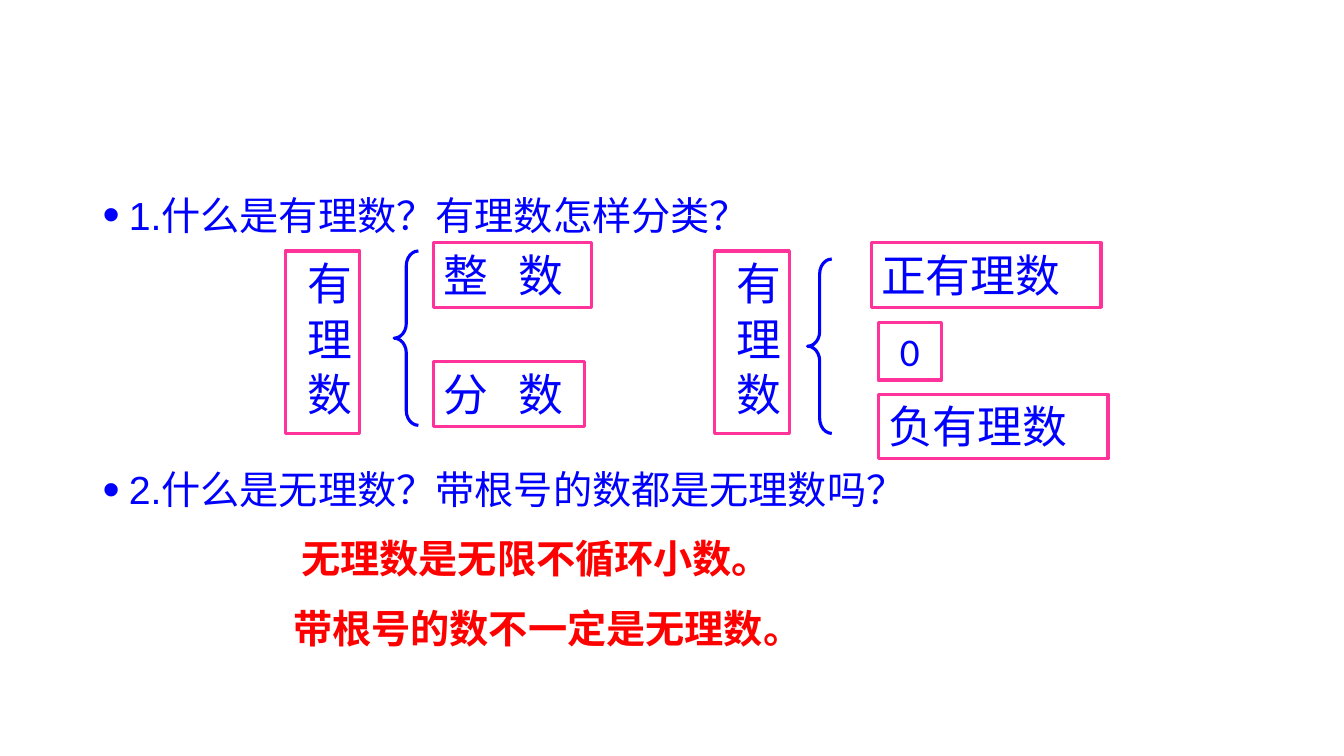
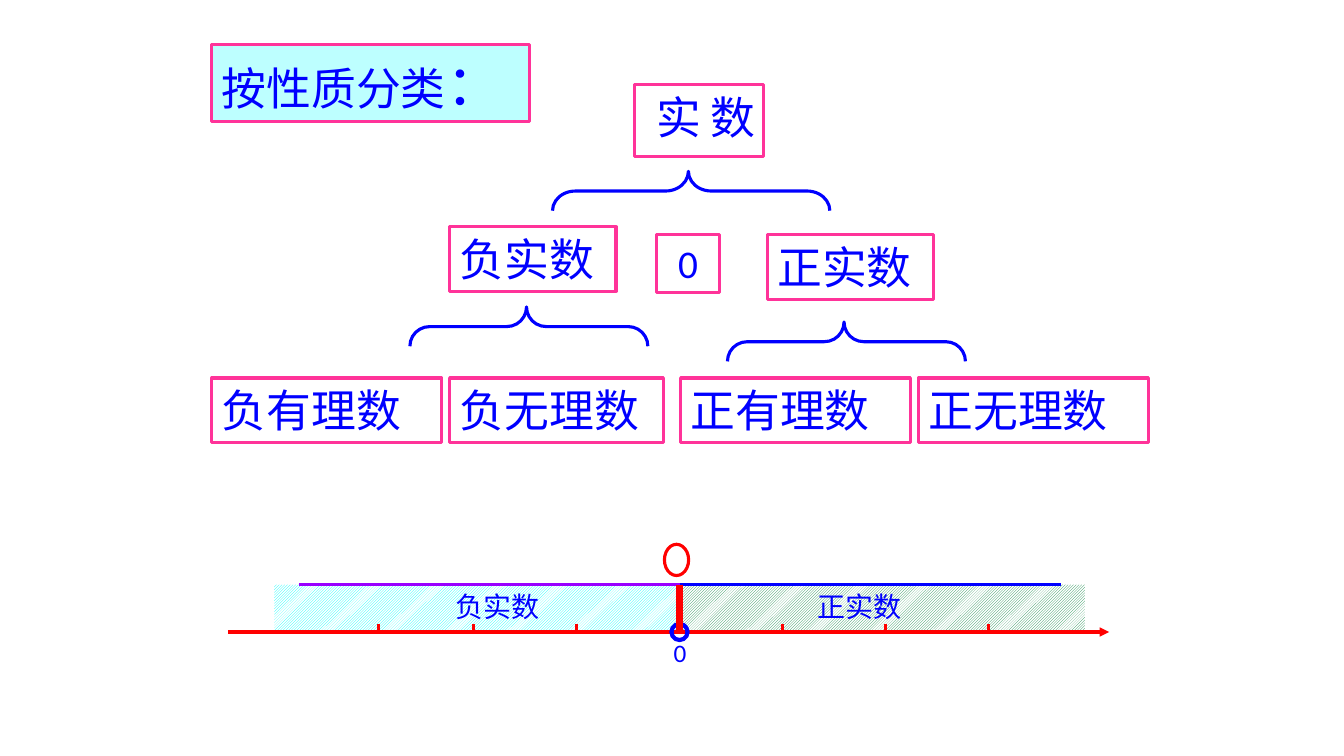
import pptx
import pptx.dml.color
import pptx.enum.dml
import pptx.enum.shapes
import pptx.enum.text
import pptx.oxml
import pptx.oxml.ns
import pptx.util
from dataclasses import dataclass

Inches = pptx.util.Inches
Pt = pptx.util.Pt
RGB = pptx.dml.color.RGBColor.from_string
qn = pptx.oxml.ns.qn
SHAPE = pptx.enum.shapes.MSO_SHAPE
ALIGN = pptx.enum.text.PP_ALIGN
ANCHOR = pptx.enum.text.MSO_ANCHOR


@dataclass(frozen=True)
class Theme:
    blue: str = "0000FF"
    pink: str = "FF3399"
    red: str = "FF0000"
    purple: str = "9900FF"
    cyan: str = "00FFFF"
    green: str = "158949"
    white: str = "FFFFFF"
    font: str = "Calibri"
    question_font: str = "Arial"
    colon: int = 40
    term: int = 32
    body: int = 28
    region: int = 20
    tick: int = 18
    outline: float = 2.25


theme = Theme()


def add_box(shapes, box, runs=(), kind=SHAPE.RECTANGLE, line=theme.pink, width=theme.outline,
            color=theme.blue, font=theme.font, bold=False, align=ALIGN.LEFT, vertical=False):
    """Add a preset shape, or a text box if kind is None; runs are (text, size) pairs."""
    frame = [Inches(value) for value in box]
    if kind is None:
        shape = shapes.add_textbox(*frame)
    else:
        shape = shapes.add_shape(kind, *frame)
        shape.shadow.inherit = False
        shape.fill.background()
        if line:
            shape.line.color.rgb = RGB(line)
            shape.line.width = Pt(width)
        else:
            shape.line.fill.background()
    text_frame = shape.text_frame
    text_frame.word_wrap = True
    text_frame.vertical_anchor = ANCHOR.TOP
    if vertical:
        text_frame._txBody.bodyPr.set("vert", "eaVert")
    paragraph = text_frame.paragraphs[0]
    paragraph.alignment = align
    for text, size in runs:
        run = paragraph.add_run()
        run.text = text
        run.font.size = Pt(size)
        run.font.name = font
        run.font.bold = bold
        run.font.color.rgb = RGB(color)
    return shape


def add_line(shapes, start, end, color, width=theme.outline, arrow=False):
    connector = shapes.add_connector(
        pptx.enum.shapes.MSO_CONNECTOR.STRAIGHT, *[Inches(value) for value in (*start, *end)])
    connector.line.color.rgb = RGB(color)
    connector.line.width = Pt(width)
    properties = connector.element.spPr
    if arrow:
        tail = pptx.oxml.ns.nsdecls("a")
        properties.find(qn("a:ln")).append(
            pptx.oxml.parse_xml(f'<a:tailEnd {tail} type="triangle"/>'))
    properties.append(properties.makeelement(qn("a:effectLst"), {}))


presentation = pptx.Presentation()
presentation.slide_width = Inches(13.33)
presentation.slide_height = Inches(7.5)
blank = presentation.slide_layouts[6]

# Review of rational and irrational numbers
slide = presentation.slides.add_slide(blank)
shapes = slide.shapes

for top, question in ((1.85, "1.什么是有理数？有理数怎样分类？"),
                      (4.57, "2.什么是无理数？带根号的数都是无理数吗？")):
    shape = add_box(shapes, (0.92, top, 11.5, 0.66), [(question, theme.body)],
                    kind=None, font=theme.question_font)
    properties = shape.text_frame.paragraphs[0]._p.get_or_add_pPr()
    properties.set("marL", str(Inches(0.26)))
    properties.set("indent", str(Inches(-0.26)))
    for tag, attributes in (("a:buSzPct", {"val": "125000"}),
                            ("a:buFont", {"typeface": theme.question_font}),
                            ("a:buChar", {"char": "•"})):
        properties.append(properties.makeelement(qn(tag), attributes))

for root_left, brace_left, brace_top in ((2.83, 3.91, 2.49), (7.09, 8.01, 2.57)):
    add_box(shapes, (root_left, 2.49, 0.74, 1.81), [("有 理 数", theme.term)], vertical=True)
    brace = add_box(shapes, (brace_left, brace_top, 0.24, 1.73), kind=SHAPE.LEFT_BRACE, line=theme.blue)
    brace.adjustments[0] = 0.61

for top, width, text in ((2.41, 1.57, "整\t数"), (3.59, 1.5, "分\t数")):
    shape = add_box(shapes, (4.3, top, width, 0.64), [(text, theme.term)])
    properties = shape.text_frame.paragraphs[0]._p.get_or_add_pPr()
    tabs = properties.makeelement(qn("a:tabLst"), {})
    tabs.append(tabs.makeelement(qn("a:tab"), {"pos": str(Inches(0.74)), "algn": "l"}))
    properties.append(tabs)

for left, top, text in ((8.64, 2.41, "正有理数"), (8.71, 3.91, "负有理数")):
    add_box(shapes, (left, top, 2.28, 0.64), [(text, theme.term)])
add_box(shapes, (8.71, 3.2, 0.63, 0.57), [("0", theme.body)], align=ALIGN.CENTER)

for left, top, answer in ((2.89, 5.25, "无理数是无限不循环小数。"),
                          (2.81, 5.95, "带根号的数不一定是无理数。")):
    add_box(shapes, (left, top, 7.17, 0.66), [(answer, theme.body)],
            kind=None, color=theme.red, bold=True)

# Real numbers classified by sign
slide = presentation.slides.add_slide(blank)
shapes = slide.shapes
origin, axis_top, band_top = 6.74, 6.27, 5.8
band_width = 4.02

for left, color in ((origin - band_width, theme.cyan), (origin, theme.green)):
    band = add_box(shapes, (left, band_top, band_width, axis_top - band_top), line=None)
    band.fill.patterned()
    band.fill.pattern = pptx.enum.dml.MSO_PATTERN.DARK_UPWARD_DIAGONAL
    band.fill.fore_color.rgb = RGB(color)
    band.fill.back_color.rgb = RGB(theme.white)

heading = add_box(shapes, (2.1, 0.44, 3.15, 0.77), [("按性质分类", theme.term), ("：", theme.colon)])
heading.fill.solid()
heading.fill.fore_color.rgb = RGB(theme.cyan)
tint = heading.element.spPr.find(qn("a:solidFill")).find(qn("a:srgbClr"))
tint.append(tint.makeelement(qn("a:alpha"), {"val": "26000"}))

add_box(shapes, (6.29, 0.84, 1.28, 0.71), [("数实", theme.term)], vertical=True)
for left, top, width, text in ((4.46, 2.25, 1.65, "负实数"), (7.61, 2.33, 1.65, "正实数"),
                               (2.1, 3.75, 2.28, "负有理数"), (4.46, 3.75, 2.12, "负无理数"),
                               (6.75, 3.75, 2.28, "正有理数"), (9.11, 3.75, 2.28, "正无理数")):
    add_box(shapes, (left, top, width, 0.64), [(text, theme.term)])
add_box(shapes, (6.51, 2.33, 0.63, 0.57), [("0", theme.body)], align=ALIGN.CENTER)

for left, top, length, curve in ((6.66, 0.52, 2.75, 0.58), (5.05, 2.06, 2.36, 0.5),
                                 (8.2, 2.21, 2.36, 0.5)):
    brace = add_box(shapes, (left, top, 0.39, length), kind=SHAPE.LEFT_BRACE, line=theme.blue)
    brace.adjustments[0] = curve
    brace.adjustments[1] = 0.51
    brace.rotation = 90

# Number line
axis = shapes.add_group_shape().shapes
add_line(axis, (2.26, axis_top), (11, axis_top), theme.red, arrow=True)
for tick in (3.75, *(origin + 1.02 * step for step in range(-2, 4))):
    add_line(axis, (tick, axis_top - 0.08), (tick, axis_top), theme.red)
add_box(axis, (6.35, axis_top, 0.79, 0.4), [("0", theme.tick)], kind=None, align=ALIGN.CENTER)

for left, width, align in ((4.15, 1.57, ALIGN.CENTER), (8.01, 1.1, ALIGN.LEFT)):
    text = "负实数" if left < origin else "正实数"
    add_box(shapes, (left, band_top, width, 0.44), [(text, theme.region)], kind=None, align=align)

zero = add_box(shapes, (6.59, 5.4, 0.24, 0.31), kind=SHAPE.OVAL, line=theme.red)
zero.fill.solid()
zero.fill.fore_color.rgb = RGB(theme.white)
add_box(shapes, (origin - 0.08, axis_top - 0.08, 0.16, 0.16), kind=SHAPE.OVAL,
        line=theme.blue, width=3)
for end, color in ((2.97, theme.purple), (10.52, theme.blue)):
    add_line(shapes, (origin, band_top), (end, band_top), color)
add_line(shapes, (origin, band_top), (origin, axis_top), theme.red, width=4.5)

presentation.save("out.pptx")
